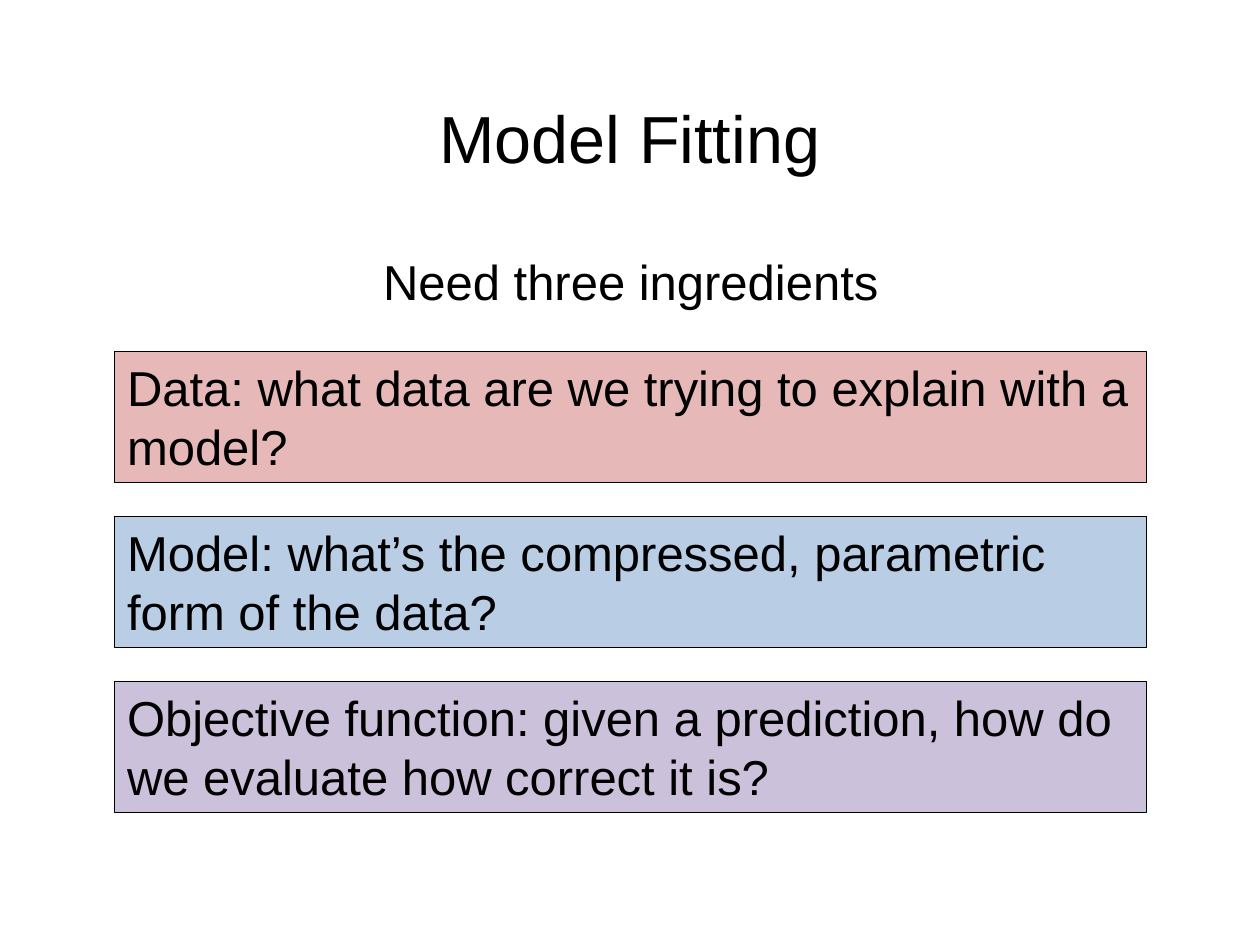
from dataclasses import dataclass

from pptx import Presentation
from pptx.dml.color import RGBColor
from pptx.enum.shapes import MSO_SHAPE
from pptx.enum.text import MSO_ANCHOR, MSO_AUTO_SIZE, PP_ALIGN
from pptx.util import Inches, Pt

RECTANGLE = MSO_SHAPE.RECTANGLE
TOP, MIDDLE = MSO_ANCHOR.TOP, MSO_ANCHOR.MIDDLE
FIT_SHAPE, NO_FIT = MSO_AUTO_SIZE.SHAPE_TO_FIT_TEXT, MSO_AUTO_SIZE.NONE
LEFT, CENTER = PP_ALIGN.LEFT, PP_ALIGN.CENTER


@dataclass(frozen=True)
class Theme:
    font: str = "Arial"
    title_size: Pt = Pt(38)
    body_size: Pt = Pt(28)
    outline_width: Pt = Pt(0.75)
    ink: RGBColor = RGBColor(0x00, 0x00, 0x00)
    data: RGBColor = RGBColor(0xE6, 0xB9, 0xB8)
    model: RGBColor = RGBColor(0xB9, 0xCD, 0xE5)
    objective: RGBColor = RGBColor(0xCC, 0xC1, 0xDA)


THEME = Theme()


def write(shape, text, size, align, anchor=TOP, auto_size=FIT_SHAPE):
    """Fill a shape with one wrapped paragraph and return that paragraph."""
    frame = shape.text_frame
    frame.word_wrap = True
    frame.auto_size = auto_size
    frame.vertical_anchor = anchor
    paragraph = frame.paragraphs[0]
    paragraph.alignment = align
    run = paragraph.add_run()
    run.text = text
    run.font.name = THEME.font
    run.font.size = size
    run.font.color.rgb = THEME.ink
    return paragraph


prs = Presentation()
prs.slide_width, prs.slide_height = Inches(10), Inches(7.5)
slide = prs.slides.add_slide(prs.slide_layouts[5])

# Heading
title = slide.shapes.title
title.left, title.top = Inches(0.69), Inches(0.4)
title.width, title.height = Inches(8.62), Inches(1.45)
heading = write(title, "Model Fitting", THEME.title_size, CENTER, MIDDLE, NO_FIT)
heading.line_spacing = 0.9

# Lead-in and the three ingredients share one column
column_left, column_width = Inches(0.91), Inches(8.19)
lead_in = slide.shapes.add_textbox(column_left, Inches(1.95), column_width, Inches(0.57))
write(lead_in, "Need three ingredients", THEME.body_size, CENTER)

ingredients = [
    ("Data: what data are we trying to explain with a model?", THEME.data),
    ("Model: what’s the compressed, parametric form of the data?", THEME.model),
    ("Objective function: given a prediction, how do we evaluate how correct it is?",
     THEME.objective),
]
first_top, pitch, ingredient_height = Inches(2.79), Inches(1.31), Inches(1.04)
for index, (question, color) in enumerate(ingredients):
    ingredient = slide.shapes.add_shape(
        RECTANGLE, column_left, first_top + index * pitch, column_width, ingredient_height)
    ingredient.shadow.inherit = False
    ingredient.fill.solid()
    ingredient.fill.fore_color.rgb = color
    ingredient.line.color.rgb = THEME.ink
    ingredient.line.width = THEME.outline_width
    write(ingredient, question, THEME.body_size, LEFT)

prs.save("out.pptx")
